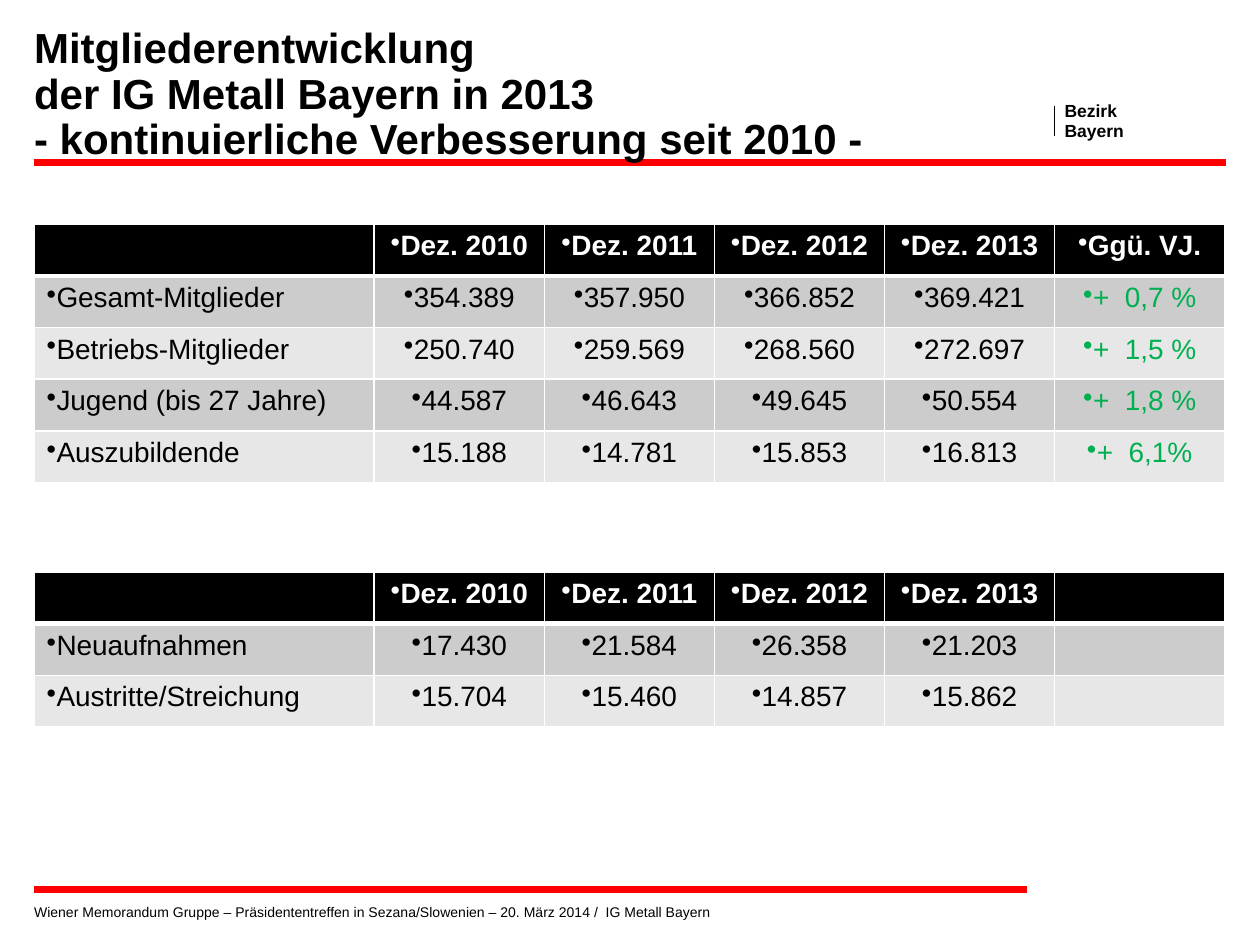
"""Build a slide with two membership tables between red rules."""
import lxml.etree
import pptx
import pptx.dml.color
import pptx.enum.shapes
import pptx.enum.text
import pptx.oxml
import pptx.oxml.ns
import pptx.util

Inches = pptx.util.Inches
Pt = pptx.util.Pt
RGBColor = pptx.dml.color.RGBColor
qn = pptx.oxml.ns.qn

BLACK = RGBColor(0x00, 0x00, 0x00)
WHITE = RGBColor(0xFF, 0xFF, 0xFF)
RED = RGBColor(0xFF, 0x00, 0x00)
GREEN = RGBColor(0x00, 0xB0, 0x50)
BANDS = [RGBColor(0xE7, 0xE7, 0xE7), RGBColor(0xCC, 0xCC, 0xCC)]
FONT = "Arial"
LEFT = 0.27
COLUMN_WIDTHS = [2.7] + [1.35] * 5
ROW_HEIGHT = 0.41
YEARS = ["Dez. 2010", "Dez. 2011", "Dez. 2012", "Dez. 2013"]


def set_font(paragraph, size, color, bold):
    paragraph.font.name = FONT
    paragraph.font.size = Pt(size)
    paragraph.font.color.rgb = color
    paragraph.font.bold = bold


def add_border(cell, side, width):
    properties = cell._tc.get_or_add_tcPr()
    line = lxml.etree.SubElement(properties, qn(f"a:ln{side}"), w=str(Pt(width)))
    fill = lxml.etree.SubElement(line, qn("a:solidFill"))
    lxml.etree.SubElement(fill, qn("a:srgbClr"), val=str(WHITE))


presentation = pptx.Presentation()
presentation.slide_width = Inches(10)
presentation.slide_height = Inches(7.5)
slide = presentation.slides.add_slide(presentation.slide_layouts[6])

rules = [
    (LEFT, 1.29, 9.73, 1.29, RED, 4.5),
    (8.37, 0.84, 8.37, 1.08, BLACK, 0.8),
    (LEFT, 7.06, 8.15, 7.06, RED, 4.5),
]
for x1, y1, x2, y2, color, width in rules:
    rule = slide.shapes.add_connector(
        pptx.enum.shapes.MSO_CONNECTOR.STRAIGHT,
        Inches(x1), Inches(y1), Inches(x2), Inches(y2))
    rule.line.color.rgb = color
    rule.line.width = Pt(width)
    lxml.etree.SubElement(rule._element.spPr, qn("a:effectLst"))

texts = [
    (8.45, 0.81, 0.47, 0.31, "Bezirk\nBayern", 10, 11, True, False),
    (LEFT, 7.14, 7.09, 0.17,
     "Wiener Memorandum Gruppe – Präsidententreffen in Sezana/Slowenien"
     " – 20. März 2014 /  IG Metall Bayern", 8, 12, False, True),
    (LEFT, 0.21, 7.48, 1.09,
     "Mitgliederentwicklung\nder IG Metall Bayern in 2013\n"
     "- kontinuierliche Verbesserung seit 2010 -", 24, 26, True, True),
]
for left, top, width, height, text, size, spacing, bold, wrap in texts:
    box = slide.shapes.add_textbox(
        Inches(left), Inches(top), Inches(width), Inches(height))
    frame = box.text_frame
    frame.margin_left = frame.margin_right = 0
    frame.margin_top = frame.margin_bottom = 0
    frame.word_wrap = wrap
    frame.auto_size = pptx.enum.text.MSO_AUTO_SIZE.SHAPE_TO_FIT_TEXT
    paragraph = frame.paragraphs[0]
    paragraph.text = text
    paragraph.line_spacing = Pt(spacing)
    set_font(paragraph, size, BLACK, bold)

tables = [
    (4.54, [
        ["", *YEARS, ""],
        ["Neuaufnahmen", "17.430", "21.584", "26.358", "21.203", ""],
        ["Austritte/Streichung", "15.704", "15.460", "14.857", "15.862", ""],
    ]),
    (1.78, [
        ["", *YEARS, "Ggü. VJ."],
        ["Gesamt-Mitglieder", "354.389", "357.950", "366.852", "369.421", "+  0,7 %"],
        ["Betriebs-Mitglieder", "250.740", "259.569", "268.560", "272.697", "+  1,5 %"],
        ["Jugend (bis 27 Jahre)", "44.587", "46.643", "49.645", "50.554", "+  1,8 %"],
        ["Auszubildende", "15.188", "14.781", "15.853", "16.813", "+  6,1%"],
    ]),
]
for top, rows in tables:
    table = slide.shapes.add_table(
        len(rows), len(COLUMN_WIDTHS), Inches(LEFT), Inches(top),
        Inches(sum(COLUMN_WIDTHS)), Inches(ROW_HEIGHT * len(rows))).table
    for column, width in zip(table.columns, COLUMN_WIDTHS):
        column.width = Inches(width)
    for row_index, values in enumerate(rows):
        table.rows[row_index].height = Inches(ROW_HEIGHT)
        header = row_index == 0
        for column_index, value in enumerate(values):
            cell = table.cell(row_index, column_index)
            add_border(cell, "L", 1)
            add_border(cell, "R", 1)
            add_border(cell, "T", 3 if row_index == 1 else 1)
            add_border(cell, "B", 3 if header else 1)
            cell.fill.solid()
            cell.fill.fore_color.rgb = BLACK if header else BANDS[row_index % 2]
            paragraph = cell.text_frame.paragraphs[0]
            if value:
                paragraph.text = value
                properties = paragraph._p.get_or_add_pPr()
                properties.set("marL", "0")
                properties.set("indent", "0")
                lxml.etree.SubElement(properties, qn("a:buChar"), char="•")
            if column_index > 0:
                paragraph.alignment = pptx.enum.text.PP_ALIGN.CENTER
            body_color = GREEN if column_index == 5 else BLACK
            set_font(paragraph, 16, WHITE if header else body_color, header)

presentation.save("out.pptx")
